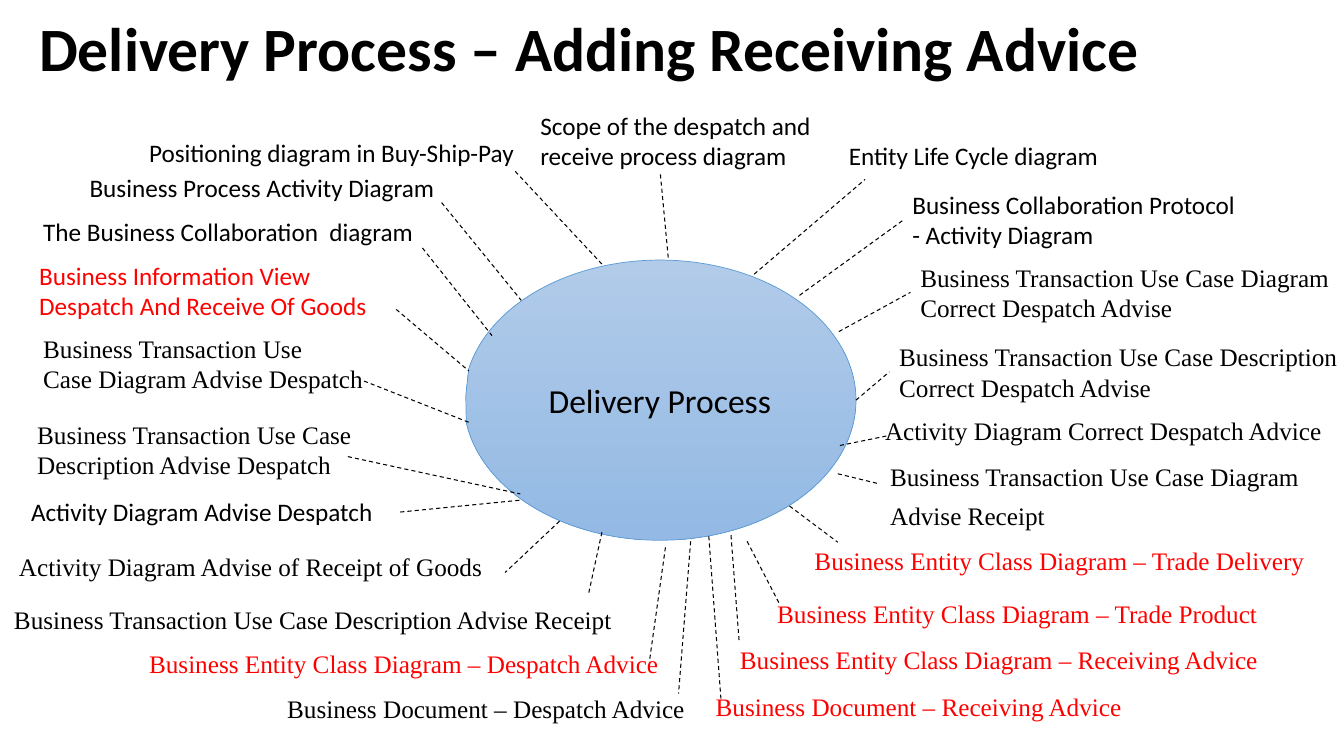
from dataclasses import dataclass

from lxml import etree
from pptx import Presentation
from pptx.dml.color import RGBColor
from pptx.enum.dml import MSO_LINE
from pptx.enum.shapes import MSO_CONNECTOR, MSO_SHAPE
from pptx.enum.text import MSO_ANCHOR, MSO_AUTO_SIZE, PP_ALIGN
from pptx.oxml.ns import qn
from pptx.util import Inches, Pt

COLORS = {"ink": "000000", "red": "FF0000", "light": "B1CBE9", "deep": "93B9E4", "edge": "5B9BD5"}
SANS, SERIF = "Calibri", "Times New Roman"


@dataclass
class Label:
    x: float
    y: float
    w: float
    text: str
    font: str = SERIF
    color: str = "ink"
    wrap: bool = True
    indented: bool = False


# Positions are inches from the top left corner of the diagram box.
LEFT_LABELS = [
    Label(1.38, 0.31, 4.36, "Positioning diagram in Buy-Ship-Pay", SANS),
    Label(0.79, 0.66, 3.73, "Business Process Activity Diagram", SANS, wrap=False),
    Label(0.33, 1.1, 4.2, "The Business Collaboration  diagram", SANS),
    Label(0.29, 1.53, 3.6, "Business Information View\nDespatch And Receive Of Goods", SANS, "red", False),
    Label(0.33, 2.26, 3.66, "Business Transaction Use\nCase Diagram Advise Despatch"),
    Label(0.27, 3.11, 5.53, "Business Transaction Use Case\nDescription Advise Despatch"),
    Label(0.21, 3.87, 3.77, "Activity Diagram Advise Despatch", SANS, wrap=False),
    Label(-1.41, 4.42, 6.54, "Activity Diagram Advise of Receipt of Goods", wrap=False, indented=True),
    Label(0.04, 4.95, 6.19, "Business Transaction Use Case Description Advise Receipt", wrap=False),
    Label(1.38, 5.38, 5.31, "Business Entity Class Diagram – Despatch Advice", SERIF, "red", False),
    Label(2.75, 5.83, 4.25, "Business Document – Despatch Advice", wrap=False),
]
RIGHT_LABELS = [
    Label(5.26, 0.04, 2.95, "Scope of the despatch and\nreceive process diagram", SANS, wrap=False),
    Label(8.32, 0.34, 3.33, "Entity Life Cycle diagram", SANS),
    Label(8.95, 0.83, 4.52, "Business Collaboration Protocol\n- Activity Diagram", SANS),
    Label(9.03, 1.55, 6.67, "Business Transaction Use Case Diagram\nCorrect Despatch Advise"),
    Label(8.82, 2.34, 6.67, "Business Transaction Use Case Description\nCorrect Despatch Advise"),
    Label(7.18, 3.07, 6.67, "Activity Diagram Correct Despatch Advice", indented=True),
    Label(7.23, 3.53, 8.44, "Business Transaction Use Case Diagram\nAdvise Receipt", indented=True),
    Label(7.98, 4.36, 5.17, "Business Entity Class Diagram – Trade Delivery", SERIF, "red", False),
    Label(7.61, 4.89, 5.01, "Business Entity Class Diagram – Trade Product", SERIF, "red", False),
    Label(5.74, 5.34, 7.83, "Business Entity Class Diagram – Receiving Advice", SERIF, "red", indented=True),
    Label(7, 5.81, 4.4, "Business Document – Receiving Advice", SERIF, "red", False),
]
SPOKES = [
    (5.11, 0.7, 5.97, 1.62), (4.38, 1.01, 5.17, 1.98), (4.19, 1.46, 4.88, 2.33),
    (3.93, 2.07, 4.65, 2.68), (3.61, 2.78, 4.65, 3.19), (3.45, 3.53, 5.16, 3.9),
    (3.97, 4.08, 5.18, 3.96), (6.55, 0.73, 6.63, 1.58), (7.48, 1.72, 8.58, 0.78),
    (7.93, 1.93, 8.95, 1.19), (8.32, 2.29, 9.03, 1.9), (8.49, 2.97, 8.82, 2.69),
    (8.33, 3.42, 8.82, 3.32), (8.31, 3.7, 8.72, 3.8), (5.97, 4.28, 5.84, 4.88),
    (5.55, 4.17, 5.01, 4.68), (7.83, 4.02, 8.31, 4.38), (7.41, 4.37, 7.73, 4.99),
    (6.6, 4.43, 6.44, 5.57), (6.85, 4.37, 6.73, 5.88), (7.03, 4.32, 7.15, 5.93),
    (7.25, 4.31, 7.33, 5.35),
]


def rgb(name):
    return RGBColor.from_string(COLORS[name])


def set_font(p, name, size, color="ink", bold=False):
    f = p.font
    f.name, f.size, f.bold = name, Pt(size), bold
    f.color.rgb = rgb(color)


def add_title(s, box, text):
    tf = s.shapes.add_textbox(*map(Inches, box)).text_frame
    tf.word_wrap = True
    tf.vertical_anchor = MSO_ANCHOR.MIDDLE
    p = tf.paragraphs[0]
    p.text = text
    p.line_spacing = 0.9
    set_font(p, SANS, 44, bold=True)


def add_hub(s, box, text):
    sp = s.shapes.add_shape(MSO_SHAPE.OVAL_CALLOUT, *map(Inches, box))
    sp.shadow.inherit = False
    sp.adjustments[0], sp.adjustments[1] = -0.495, -0.016
    sp.fill.gradient()
    sp.fill.gradient_angle = 270
    for stop, color in zip(sp.fill.gradient_stops, ("light", "deep")):
        stop.color.rgb = rgb(color)
    sp.line.color.rgb = rgb("edge")
    sp.line.width = Pt(0.5)
    tf = sp.text_frame
    tf.vertical_anchor = MSO_ANCHOR.MIDDLE
    p = tf.paragraphs[0]
    p.text = text
    p.alignment = PP_ALIGN.CENTER
    set_font(p, SANS, 24)


def add_label(s, left, top, label):
    lines = label.text.split("\n")
    height = 0.4 if len(lines) == 1 else 0.71
    box = (left + label.x, top + label.y, label.w, height)
    tf = s.shapes.add_textbox(*map(Inches, box)).text_frame
    tf.word_wrap = label.wrap
    tf.auto_size = MSO_AUTO_SIZE.SHAPE_TO_FIT_TEXT
    tf.text = label.text
    for i, p in enumerate(tf.paragraphs):
        if label.indented:
            p.alignment = PP_ALIGN.JUSTIFY
            pPr = p._p.get_or_add_pPr()
            pPr.set("marL", str(Inches(1)))
            pPr.set("indent", str(Inches(0.5)))
            if i:
                p.space_before = Pt(6)
        set_font(p, label.font, 18, label.color)


def add_spoke(s, left, top, ends):
    x1, y1, x2, y2 = ends
    points = (left + x1, top + y1, left + x2, top + y2)
    line = s.shapes.add_connector(MSO_CONNECTOR.STRAIGHT, *map(Inches, points))
    line.line.color.rgb = rgb("ink")
    line.line.width = Pt(0.75)
    line.line.dash_style = MSO_LINE.DASH
    etree.SubElement(line._element.spPr, qn("a:effectLst"))


def add_diagram(s, left, top):
    """Hub with dashed spokes to the labels around it."""
    add_hub(s, (left + 4.6, top + 1.58, 3.89, 2.78), "Delivery Process")
    for label in LEFT_LABELS + RIGHT_LABELS:
        add_label(s, left, top, label)
    for ends in SPOKES:
        add_spoke(s, left, top, ends)


def main():
    prs = Presentation()
    prs.slide_width, prs.slide_height = Inches(13.33), Inches(7.5)
    s = prs.slides.add_slide(prs.slide_layouts[6])
    add_title(s, (0.29, 0.06, 11.5, 0.91), "Delivery Process – Adding Receiving Advice")
    add_diagram(s, 0, 1)
    prs.save("out.pptx")


if __name__ == "__main__":
    main()
